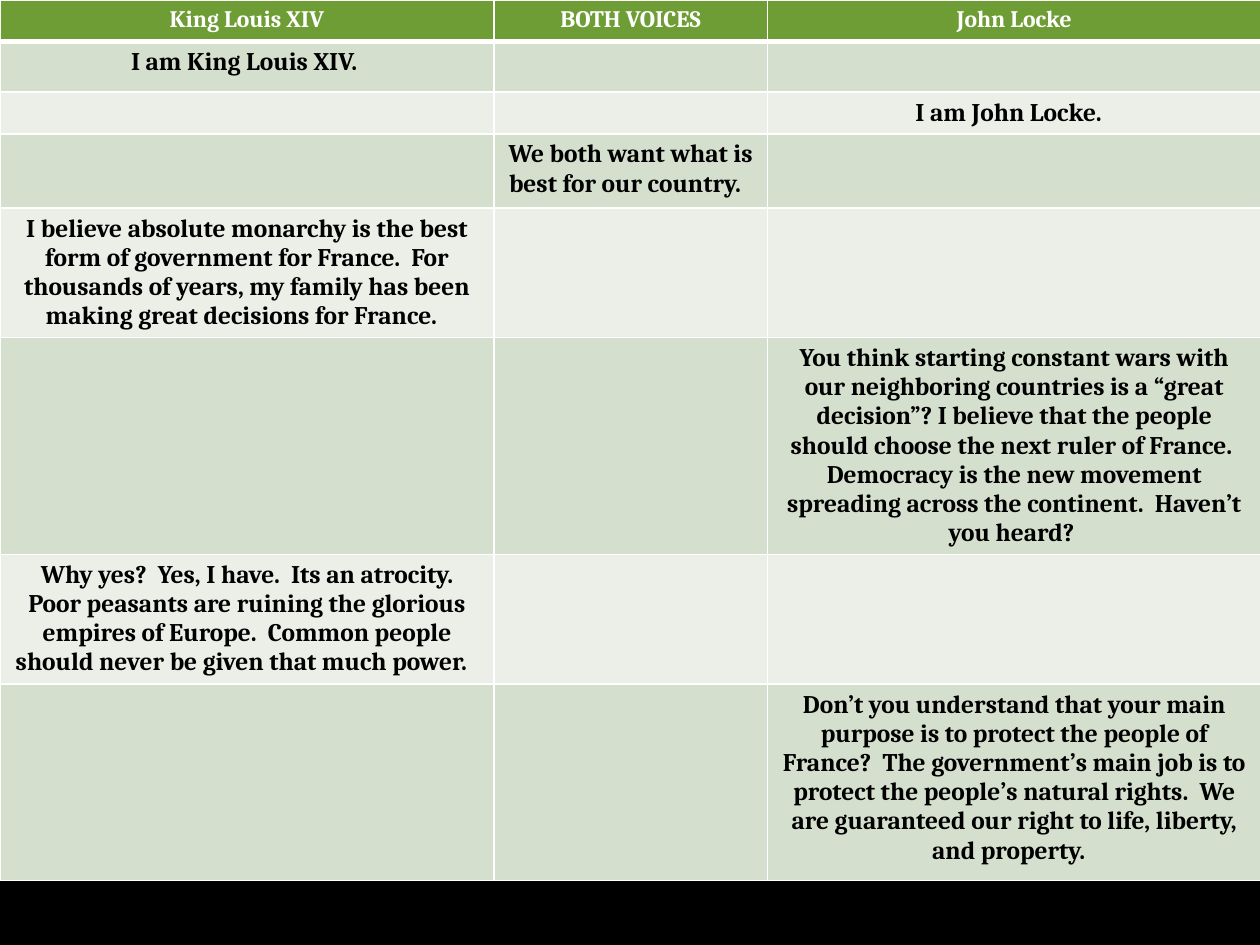
import pptx
import pptx.util
import pptx.dml.color
import pptx.enum.text
import pptx.oxml.ns
from dataclasses import dataclass
from lxml import etree


@dataclass(frozen=True)
class Theme:
    font: str = "Cambria"
    back: str = "000000"
    head: str = "6E9D35"
    bands: tuple = ("D5DFCE", "EBEFE8")
    light: str = "FFFFFF"
    dark: str = "000000"
    head_size: float = 13.5
    body_size: float = 14.5


THEME = Theme()
WIDE, HIGH = 10, 7.5
COLS = (3.92, 2.17, 3.92)
ROWS = (0.33, 0.4, 0.33, 0.59, 1.02, 1.67, 1.03, 1.56)
HEADS = ("King Louis XIV", "BOTH VOICES", "John Locke")
KING, BOTH, LOCKE = range(3)

# Who speaks, and the line spoken
LINES = (
    (KING, "I am King Louis XIV. "),
    (LOCKE, "I am John Locke.  "),
    (BOTH, "We both want what is best for our country.  "),
    (KING, "I believe absolute monarchy is the best form of government for "
           "France.  For thousands of years, my family has been making great "
           "decisions for France.  "),
    (LOCKE, "You think starting constant wars with our neighboring countries "
            "is a “great decision”? I believe that the people should choose "
            "the next ruler of France.  Democracy is the new movement "
            "spreading across the continent.  Haven’t you heard? "),
    (KING, "Why yes?  Yes, I have.  Its an atrocity. Poor peasants are "
           "ruining the glorious empires of Europe.  Common people should "
           "never be given that much power.  "),
    (LOCKE, "Don’t you understand that your main purpose is to protect the "
            "people of France?  The government’s main job is to protect the "
            "people’s natural rights.  We are guaranteed our right to life, "
            "liberty, and property.  "),
)


def tint(fill, color):
    fill.solid()
    fill.fore_color.rgb = pptx.dml.color.RGBColor.from_string(color)


def add_node(parent, tag, **attrs):
    return etree.SubElement(parent, pptx.oxml.ns.qn(tag), **attrs)


def edge(cell, base):
    """Draw the four borders; base is the width of the lower one."""
    props = cell._tc.get_or_add_tcPr()
    for spot, (side, width) in enumerate(
            (("L", 1), ("R", 1), ("T", 1), ("B", base))):
        line = add_node(props, f"a:ln{side}", w=str(pptx.util.Pt(width)))
        add_node(add_node(line, "a:solidFill"), "a:srgbClr", val=THEME.light)
        props.insert(spot, line)


def write(cell, text, size, color):
    para = cell.text_frame.paragraphs[0]
    para.alignment = pptx.enum.text.PP_ALIGN.CENTER
    if text:
        para.text = text
    else:
        # An empty cell keeps its type size in the end mark
        add_node(para._p, "a:endParaRPr", sz=str(int(size * 100)))
    font = para.font
    font.name, font.size, font.bold = THEME.font, pptx.util.Pt(size), True
    tint(font.fill, color)


def add_grid(slide):
    shape = slide.shapes.add_table(
        len(ROWS), len(COLS), 0, 0,
        pptx.util.Inches(WIDE), pptx.util.Inches(sum(ROWS)))
    table = shape.table
    for col, width in zip(table.columns, COLS):
        col.width = pptx.util.Inches(width)
    for row, height in zip(table.rows, ROWS):
        row.height = pptx.util.Inches(height)
    return table


def fill_row(row, texts, size, color, back, base=1):
    for cell, text in zip(row.cells, texts):
        write(cell, text, size, color)
        tint(cell.fill, back)
        edge(cell, base)


def main():
    deck = pptx.Presentation()
    deck.slide_width = pptx.util.Inches(WIDE)
    deck.slide_height = pptx.util.Inches(HIGH)
    slide = deck.slides.add_slide(deck.slide_layouts[6])
    tint(slide.background.fill, THEME.back)

    # Header row, then one banded row per spoken line
    table = add_grid(slide)
    fill_row(table.rows[0], HEADS, THEME.head_size, THEME.light,
             THEME.head, base=3)
    for num, (voice, text) in enumerate(LINES):
        texts = [text if col == voice else "" for col in range(len(COLS))]
        fill_row(table.rows[num + 1], texts, THEME.body_size, THEME.dark,
                 THEME.bands[num % 2])
    deck.save("out.pptx")


if __name__ == "__main__":
    main()
